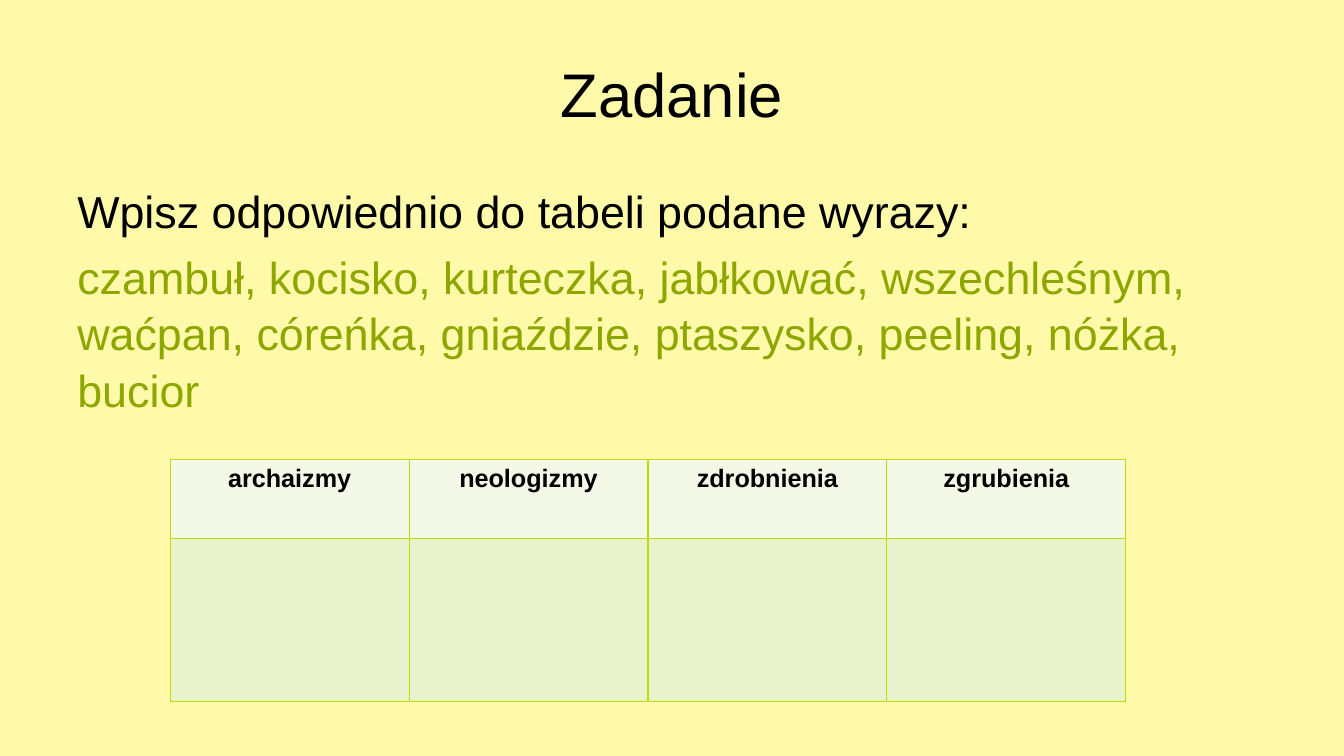
from lxml.etree import SubElement
from pptx import Presentation
from pptx.dml.color import RGBColor
from pptx.enum.text import MSO_ANCHOR, PP_ALIGN
from pptx.oxml.ns import qn
from pptx.util import Cm, Pt

# Content
TITLE = "Zadanie"
TASK = "Wpisz odpowiednio do tabeli podane wyrazy:"
WORDS = ["czambuł", "kocisko", "kurteczka", "jabłkować", "wszechleśnym", "waćpan",
         "córeńka", "gniaździe", "ptaszysko", "peeling", "nóżka", "bucior"]
HEADS = ["archaizmy", "neologizmy", "zdrobnienia", "zgrubienia"]

THEME = {
    "font": "Arial",
    "back": "FFFAA9", "ink": "000000", "green": "8EA600",
    "rows": ["F4F9E7", "E8F2CC"], "line": "BDDD00",
    "title": 44, "body": 32, "head": 18,
}

# Layout in centimetres
WIDE, HIGH = 33.87, 19.05
LEFT = 1.7
SPAN = WIDE - 2 * LEFT
GRID = (4.29, 11.58)
COL = 6.02
ROWS = [1.99, 4.11]


def write(para, text, size, color="ink", bold=False, align=PP_ALIGN.LEFT,
          before=0, lines=1.0):
    para.alignment = align
    para.space_before = Pt(before)
    para.line_spacing = lines
    run = para.add_run()
    run.text = text
    font = run.font
    font.name = THEME["font"]
    font.size = Pt(THEME[size])
    font.bold = bold
    font.color.rgb = RGBColor.from_string(THEME[color])


def add_box(slide, top, high, anchor=MSO_ANCHOR.TOP):
    box = slide.shapes.add_textbox(Cm(LEFT), Cm(top), Cm(SPAN), Cm(high))
    frame = box.text_frame
    frame.word_wrap = True
    frame.vertical_anchor = anchor
    return frame


def paint(cell, color):
    cell.fill.solid()
    cell.fill.fore_color.rgb = RGBColor.from_string(color)
    props = cell._tc.get_or_add_tcPr()
    for spot, side in enumerate(("lnL", "lnR", "lnT", "lnB")):
        edge = props.makeelement(qn("a:" + side), {"w": str(Pt(1))})
        props.insert(spot, edge)
        fill = SubElement(edge, qn("a:solidFill"))
        SubElement(fill, qn("a:srgbClr"), val=THEME["line"])


def main():
    deck = Presentation()
    deck.slide_width, deck.slide_height = Cm(WIDE), Cm(HIGH)
    slide = deck.slides.add_slide(deck.slide_layouts[6])
    back = slide.background.fill
    back.solid()
    back.fore_color.rgb = RGBColor.from_string(THEME["back"])

    # Title
    frame = add_box(slide, 0.76, 3.18, MSO_ANCHOR.MIDDLE)
    write(frame.paragraphs[0], TITLE, "title", align=PP_ALIGN.CENTER)

    # Task and word list
    frame = add_box(slide, 4.45, 12.57)
    write(frame.paragraphs[0], TASK, "body", lines=1.05)
    write(frame.add_paragraph(), ", ".join(WORDS), "body", color="green",
          before=0.2 * THEME["body"], lines=1.05)

    # Answer table
    left, top = GRID
    table = slide.shapes.add_table(len(ROWS), len(HEADS), Cm(left), Cm(top),
                                   Cm(COL * len(HEADS)), Cm(sum(ROWS))).table
    for col in table.columns:
        col.width = Cm(COL)
    for row, high, color in zip(table.rows, ROWS, THEME["rows"]):
        row.height = Cm(high)
        for cell in row.cells:
            paint(cell, color)
    for cell, head in zip(table.rows[0].cells, HEADS):
        write(cell.text_frame.paragraphs[0], head, "head", bold=True,
              align=PP_ALIGN.CENTER)

    deck.save("out.pptx")


if __name__ == "__main__":
    main()
